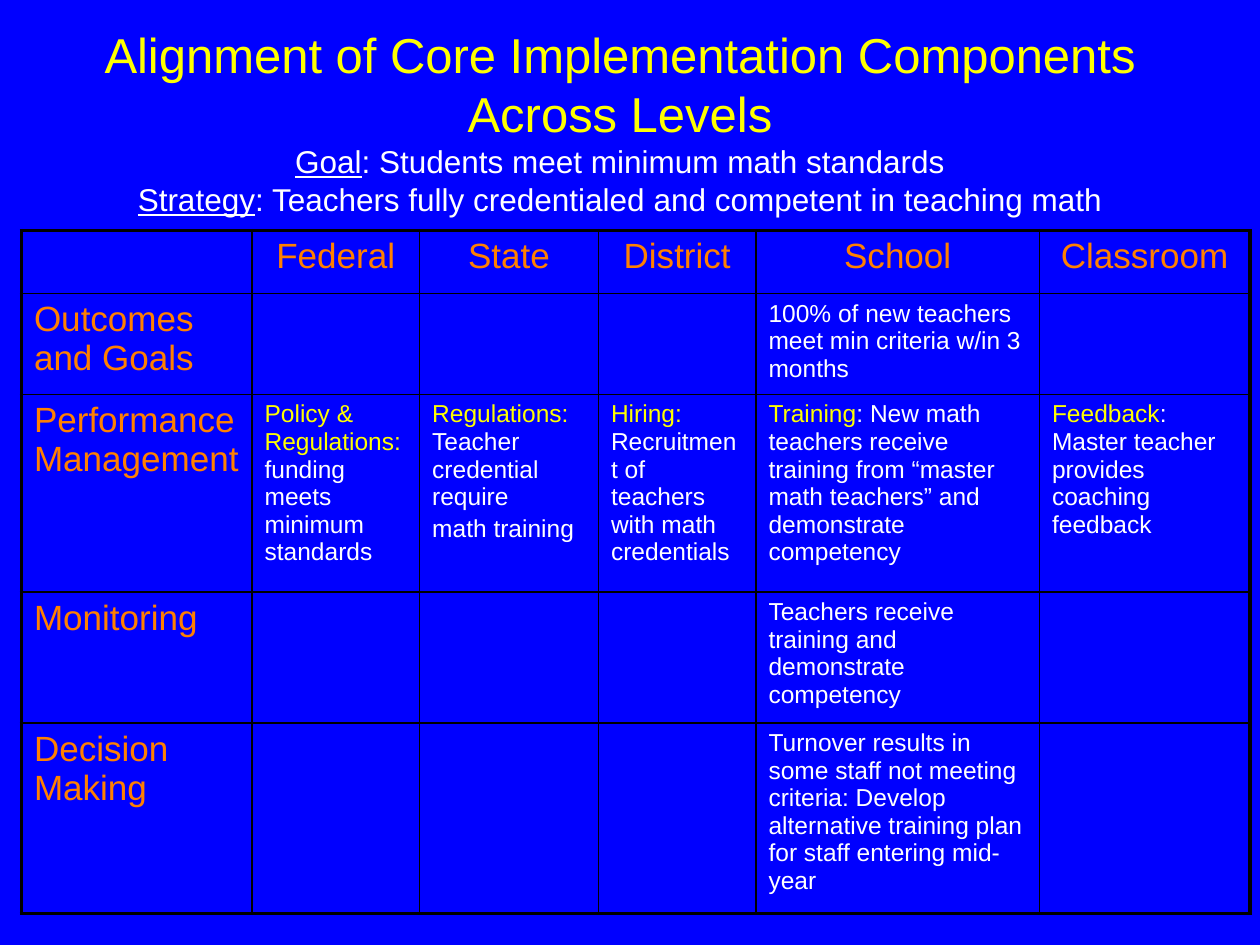
import pptx
import pptx.dml.color
import pptx.enum.text
import pptx.oxml
import pptx.oxml.ns
import pptx.util
from pptx.util import Inches

BLUE, YELLOW, ORANGE, WHITE, BLACK = "0000FF", "FFFF00", "FF8000", "FFFFFF", "000000"
THIN, THICK = 1, 2.25

COLUMN_WIDTHS = [1.83, 1.33, 1.42, 1.25, 2.25, 1.67]
ROW_HEIGHTS = [0.5, 0.8, 1.57, 1.04, 1.51]
LEVELS = ["Federal", "State", "District", "School", "Classroom"]
COMPONENTS = ["Outcomes and Goals", "Performance Management", "Monitoring", "Decision Making"]

# (row, column): paragraphs, each a list of (text, colour)
DETAILS = {
    (1, 4): [[("100% of new teachers meet min criteria w/in 3 months", WHITE)]],
    (2, 1): [[("Policy & Regulations: ", YELLOW), ("funding meets minimum standards", WHITE)]],
    (2, 2): [[("Regulations: ", YELLOW), ("Teacher credential require", WHITE)],
             [("math training", WHITE)]],
    (2, 3): [[("Hiring: ", YELLOW),
              ("Recruitment of teachers with math credentials", WHITE)]],
    (2, 4): [[("Training", YELLOW),
              (": New math teachers receive training from “master math teachers” "
               "and demonstrate competency", WHITE)]],
    (2, 5): [[("Feedback", YELLOW), (": Master teacher provides coaching feedback", WHITE)]],
    (3, 4): [[("Teachers receive training and demonstrate competency", WHITE)]],
    (4, 4): [[("Turnover results in some staff not meeting criteria: Develop alternative "
               "training plan for staff entering mid-year", WHITE)]],
}


def rgb(value):
    return pptx.dml.color.RGBColor.from_string(value)


class SlideBuilder:
    font_name = "Arial"
    center = pptx.enum.text.PP_ALIGN.CENTER

    def __init__(self, slide):
        self.slide = slide

    def background(self, color):
        fill = self.slide.background.fill
        fill.solid()
        fill.fore_color.rgb = rgb(color)

    def run(self, paragraph, text, size, color, underline=None):
        run = paragraph.add_run()
        run.text = text
        run.font.name = self.font_name
        run.font.size = pptx.util.Pt(size)
        run.font.color.rgb = rgb(color)
        run.font.underline = underline

    def title(self, heading, subtitles, left, top, width, height):
        """Fill the title with a heading and (label, text) lines below it."""
        shape = self.slide.shapes.title
        shape.left, shape.top = Inches(left), Inches(top)
        shape.width, shape.height = Inches(width), Inches(height)
        frame = shape.text_frame
        frame.word_wrap = True
        frame.auto_size = pptx.enum.text.MSO_AUTO_SIZE.NONE
        frame.vertical_anchor = pptx.enum.text.MSO_ANCHOR.MIDDLE
        paragraph = frame.paragraphs[0]
        paragraph.alignment = self.center
        self.run(paragraph, heading, 28, YELLOW)
        for label, text in subtitles:
            paragraph.add_line_break()
            self.run(paragraph, label, 18, WHITE, underline=True)
            self.run(paragraph, text, 18, WHITE)

    def table(self, left, top, column_widths, row_heights):
        rows, columns = len(row_heights), len(column_widths)
        table = self.slide.shapes.add_table(
            rows, columns, Inches(left), Inches(top),
            Inches(sum(column_widths)), Inches(sum(row_heights))).table
        table.first_row = table.horz_banding = False
        for column, width in zip(table.columns, column_widths):
            column.width = Inches(width)
        for row, height in zip(table.rows, row_heights):
            row.height = Inches(height)
        for r in range(rows):
            for c in range(columns):
                cell = table.cell(r, c)
                self.borders(cell, {"L": c == 0, "R": c == columns - 1,
                                    "T": r == 0, "B": r == rows - 1})
                cell.fill.background()
        return table

    def borders(self, cell, outer_sides):
        """Draw thick lines on the outer sides of the table, thin ones inside."""
        properties = cell._tc.get_or_add_tcPr()
        for side, outer in outer_sides.items():
            width = pptx.util.Pt(THICK if outer else THIN)
            properties.append(pptx.oxml.parse_xml(
                f'<a:ln{side} {pptx.oxml.ns.nsdecls("a")} w="{width}">'
                f'<a:solidFill><a:srgbClr val="{BLACK}"/></a:solidFill></a:ln{side}>'))

    def cell_text(self, cell, paragraphs, size, alignment=None):
        frame = cell.text_frame
        for index, runs in enumerate(paragraphs):
            paragraph = frame.add_paragraph() if index else frame.paragraphs[0]
            paragraph.alignment = alignment
            if index:
                paragraph.space_before = pptx.util.Pt(2.8)
            for text, color in runs:
                self.run(paragraph, text, size, color)


def main():
    presentation = pptx.Presentation()
    presentation.slide_width, presentation.slide_height = Inches(10), Inches(7.5)
    title_only = presentation.slide_layouts[5]
    builder = SlideBuilder(presentation.slides.add_slide(title_only))
    builder.background(BLUE)
    builder.title(
        "Alignment of Core Implementation Components Across Levels",
        [("Goal", ": Students meet minimum math standards"),
         ("Strategy", ": Teachers fully credentialed and competent in teaching math")],
        0.67, 0.17, 8.5, 1.58)

    table = builder.table(0.17, 1.83, COLUMN_WIDTHS, ROW_HEIGHTS)
    for column, level in enumerate(LEVELS, start=1):
        builder.cell_text(table.cell(0, column), [[(level, ORANGE)]], 20, builder.center)
    for row, component in enumerate(COMPONENTS, start=1):
        builder.cell_text(table.cell(row, 0), [[(component, ORANGE)]], 20)
    for (row, column), paragraphs in DETAILS.items():
        builder.cell_text(table.cell(row, column), paragraphs, 14)

    presentation.save("out.pptx")


if __name__ == "__main__":
    main()
